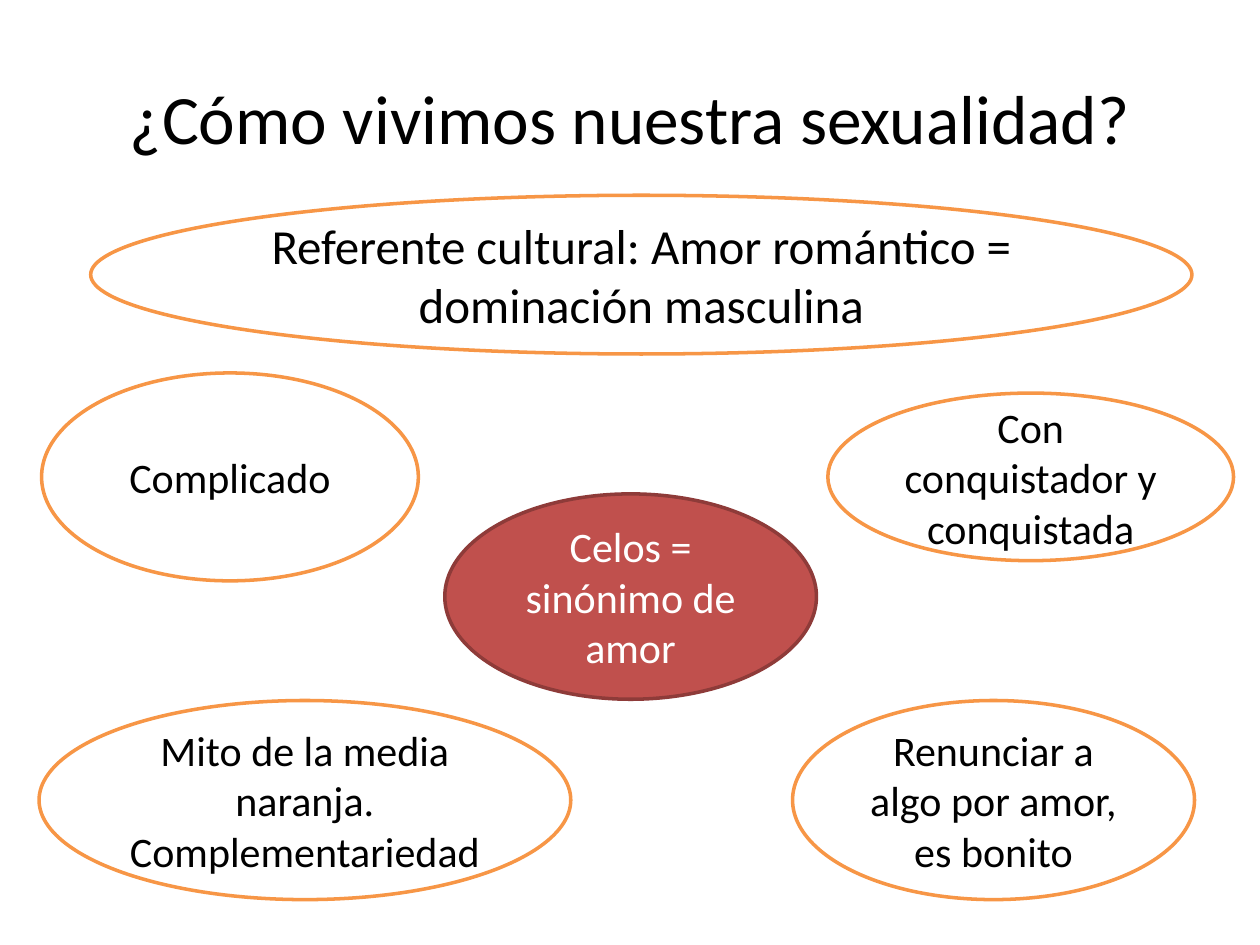
"""Build a slide of ovals on how sexuality and romantic love are lived."""
from dataclasses import dataclass

from pptx import Presentation
from pptx.dml.color import RGBColor
from pptx.enum.shapes import MSO_SHAPE
from pptx.enum.text import MSO_ANCHOR, PP_ALIGN
from pptx.util import Inches, Pt


@dataclass
class Oval:
    text: str
    left: float
    top: float
    width: float
    height: float
    size: float = 24
    fill: str = "FFFFFF"
    line: str = "F79646"
    color: str = "000000"


OVALS = [
    Oval("Renunciar a algo por amor, es bonito", 6.29, 5.56, 3.19, 1.58),
    Oval("Referente cultural: Amor romántico = dominación masculina",
         0.72, 1.55, 8.74, 1.26, size=28),
    Oval("Complicado", 0.33, 2.96, 2.99, 1.65),
    Oval("Con conquistador y conquistada", 6.57, 3.12, 3.22, 1.33),
    Oval("Mito de la media naranja. Complementariedad", 0.31, 5.56, 4.22, 1.58),
    Oval("Celos = sinónimo de amor", 3.53, 3.92, 2.95, 1.63,
         fill="C0504D", line="8E3B39", color="FFFFFF"),
]


def rgb(value: str) -> RGBColor:
    return RGBColor.from_string(value)


def write(sp, text: str, size: float, color: str) -> None:
    tf = sp.text_frame
    tf.word_wrap = True
    tf.vertical_anchor = MSO_ANCHOR.MIDDLE
    p = tf.paragraphs[0]
    p.text = text
    p.alignment = PP_ALIGN.CENTER
    p.font.name = "Calibri"
    p.font.size = Pt(size)
    p.font.color.rgb = rgb(color)


def add_title(s, text: str) -> None:
    sp = s.shapes.add_textbox(Inches(0.5), Inches(0.3), Inches(9), Inches(1.25))
    write(sp, text, 39.6, "000000")


def add_oval(s, oval: Oval) -> None:
    sp = s.shapes.add_shape(MSO_SHAPE.OVAL, Inches(oval.left), Inches(oval.top),
                            Inches(oval.width), Inches(oval.height))
    sp.shadow.inherit = False
    sp.fill.solid()
    sp.fill.fore_color.rgb = rgb(oval.fill)
    sp.line.color.rgb = rgb(oval.line)
    sp.line.width = Pt(2)
    write(sp, oval.text, oval.size, oval.color)


def main() -> None:
    prs = Presentation()
    prs.slide_width, prs.slide_height = Inches(10), Inches(7.5)
    s = prs.slides.add_slide(prs.slide_layouts[6])
    add_title(s, "¿Cómo vivimos nuestra sexualidad?")
    for oval in OVALS:
        add_oval(s, oval)
    prs.save("out.pptx")


if __name__ == "__main__":
    main()
